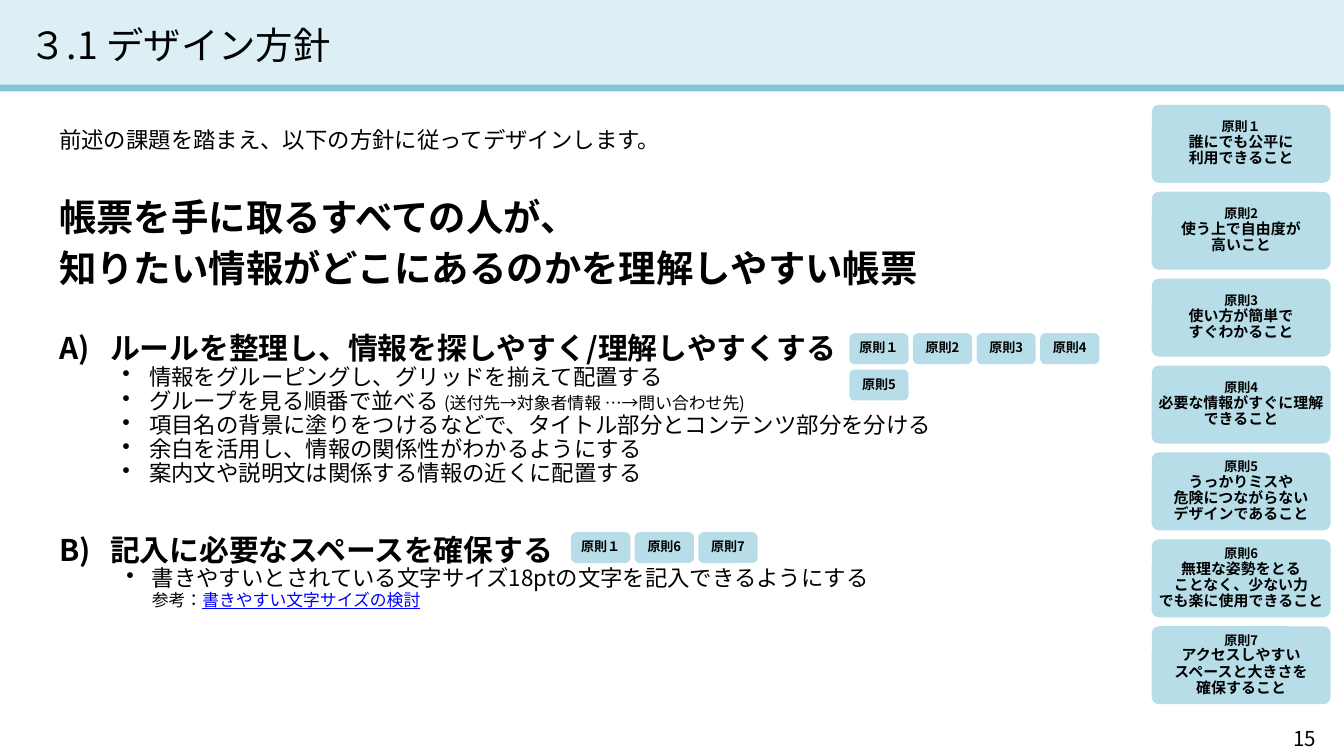
from dataclasses import dataclass

from lxml import etree
from pptx import Presentation
from pptx.dml.color import RGBColor
from pptx.enum.lang import MSO_LANGUAGE_ID
from pptx.enum.shapes import MSO_SHAPE
from pptx.enum.text import MSO_ANCHOR, PP_ALIGN
from pptx.oxml.ns import qn
from pptx.util import Inches, Pt

RECT = MSO_SHAPE.RECTANGLE
ROUNDED = MSO_SHAPE.ROUNDED_RECTANGLE
TOP, MIDDLE = MSO_ANCHOR.TOP, MSO_ANCHOR.MIDDLE
LEFT, CENTER, RIGHT = PP_ALIGN.LEFT, PP_ALIGN.CENTER, PP_ALIGN.RIGHT
JAPANESE = MSO_LANGUAGE_ID.JAPANESE

FONT = "Noto Sans CJK JP"
COLORS = {
    "band": "DCEFF4",
    "rule": "83C5D7",
    "principle": "B7DEE8",
    "text": "000000",
    "link": "0000FF",
}


@dataclass
class Run:
    text: str
    size: float | None = None
    link: bool = False


@dataclass
class Para:
    runs: list[Run]
    size: float
    bold: bool = False
    align: PP_ALIGN = LEFT
    before: float = 0
    after: float = 0
    level: int = 0
    margin: float = 0
    hanging: float = 0
    bullet: str = ""
    number: int = 0


@dataclass
class Principle:
    label: str
    lines: list[str]


@dataclass
class ChipRow:
    left: float
    top: float
    numbers: list[int]


PRINCIPLES = [
    Principle("原則１", ["誰にでも公平に", "利用できること"]),
    Principle("原則2", ["使う上で自由度が\n高いこと"]),
    Principle("原則3", ["使い方が簡単で", "すぐわかること"]),
    Principle("原則4", ["必要な情報がすぐに理解できること"]),
    Principle("原則5", ["うっかりミスや", "危険につながらない\nデザインであること"]),
    Principle("原則6", ["無理な姿勢をとる\nことなく、少ない力\nでも楽に使用できること"]),
    Principle("原則7", ["アクセスしやすい\nスペースと大きさを\n確保すること"]),
]

CHIP_ROWS = [
    ChipRow(6.32, 2.48, [1, 2, 3, 4]),
    ChipRow(6.32, 2.75, [5]),
    ChipRow(4.25, 3.96, [1, 6, 7]),
]


def headline(text: str) -> Para:
    return Para([Run(text)], 20, bold=True, after=6)


def section(text: str, number: int, before: float) -> Para:
    return Para([Run(text)], 16, bold=True, before=before,
                margin=0.38, hanging=0.38, number=number)


def item(*runs: Run, margin: float = 0.67, hanging: float = 0.2) -> Para:
    return Para(list(runs), 12, level=1, margin=margin, hanging=hanging, bullet="•")


BODY = [
    headline("帳票を手に取るすべての人が、"),
    headline("知りたい情報がどこにあるのかを理解しやすい帳票"),
    section("ルールを整理し、情報を探しやすく/理解しやすくする", 1, 17),
    item(Run("情報をグルーピングし、グリッドを揃えて配置する")),
    item(Run("グループを見る順番で並べる "), Run("(送付先→対象者情報 …→問い合わせ先)", 9)),
    item(Run("項目名の背景に塗りをつけるなどで、タイトル部分とコンテンツ部分を分ける")),
    item(Run("余白を活用し、情報の関係性がわかるようにする")),
    item(Run("案内文や説明文は関係する情報の近くに配置する")),
    section("記入に必要なスペースを確保する", 2, 26),
    item(Run("書きやすいとされている文字サイズ18ptの文字を記入できるようにする\n"),
         Run("参考：", 9), Run("書きやすい文字サイズの検討", 9, link=True),
         margin=0.69, hanging=0.19),
]


def rgb(name: str) -> RGBColor:
    return RGBColor.from_string(COLORS[name])


def add_run(p, run: Run) -> None:
    for i, line in enumerate(run.text.split("\n")):
        if i:
            p.add_line_break()
        if not line:
            continue
        r = p.add_run()
        r.text = line
        r.font.language_id = JAPANESE
        if run.size:
            r.font.size = Pt(run.size)
        if run.link:
            r.font.color.rgb = rgb("link")
            r.font.underline = True


def format_paragraph(p, para: Para) -> None:
    p.alignment = para.align
    p.level = para.level
    p.line_spacing = 0.9
    p.space_before, p.space_after = Pt(para.before), Pt(para.after)
    p.font.name = FONT
    p.font.size = Pt(para.size)
    p.font.bold = para.bold
    p.font.color.rgb = rgb("text")
    for run in para.runs:
        add_run(p, run)

    pPr = p._p.get_or_add_pPr()
    pPr.set("marL", str(Inches(para.margin)))
    pPr.set("indent", str(-Inches(para.hanging)))
    defaults = pPr.find(qn("a:defRPr"))
    etree.SubElement(defaults, qn("a:ea"), typeface=FONT)
    if para.bullet:
        defaults.addprevious(etree.Element(qn("a:buChar"), char=para.bullet))
    elif para.number:
        defaults.addprevious(etree.Element(
            qn("a:buAutoNum"), type="alphaUcParenR", startAt=str(para.number)))


def fill_text(sp, paras: list[Para], inset_x: float = 0, inset_y: float = 0,
              anchor: MSO_ANCHOR = TOP) -> None:
    tf = sp.text_frame
    tf.word_wrap = True
    tf.vertical_anchor = anchor
    tf.margin_left = tf.margin_right = Inches(inset_x)
    tf.margin_top = tf.margin_bottom = Inches(inset_y)
    for i, para in enumerate(paras):
        p = tf.add_paragraph() if i else tf.paragraphs[0]
        format_paragraph(p, para)


def add_block(s, kind: MSO_SHAPE, left: float, top: float, width: float,
              height: float, color: str):
    sp = s.shapes.add_shape(kind, Inches(left), Inches(top), Inches(width), Inches(height))
    sp.shadow.inherit = False
    sp.fill.solid()
    sp.fill.fore_color.rgb = rgb(color)
    sp.line.fill.background()
    return sp


def add_text(s, left: float, top: float, width: float, height: float,
             paras: list[Para], inset_x: float = 0, anchor: MSO_ANCHOR = TOP) -> None:
    sp = s.shapes.add_textbox(Inches(left), Inches(top), Inches(width), Inches(height))
    fill_text(sp, paras, inset_x, anchor=anchor)


def add_principle(s, index: int, principle: Principle) -> None:
    sp = add_block(s, ROUNDED, 8.57, 0.78 + index * 3.88 / 6, 1.33, 0.58, "principle")
    sp.adjustments[0] = 0.09
    paras = [Para([Run(principle.label)], 7, bold=True, align=CENTER)]
    paras += [Para([Run(line)], 8, bold=True, align=CENTER) for line in principle.lines]
    fill_text(sp, paras, anchor=MIDDLE)


def add_chips(s, row: ChipRow) -> None:
    for i, number in enumerate(row.numbers):
        sp = add_block(s, ROUNDED, row.left + i * 1.42 / 3, row.top, 0.44, 0.23, "principle")
        label = PRINCIPLES[number - 1].label
        fill_text(sp, [Para([Run(label)], 7, bold=True, align=CENTER)], 0.04, 0.05, MIDDLE)


def main() -> None:
    prs = Presentation()
    prs.slide_width, prs.slide_height = Inches(10), Inches(10 * 9 / 16)
    s = prs.slides.add_slide(prs.slide_layouts[6])
    add_block(s, RECT, 0, 0, 10, 0.65, "band")
    add_text(s, 9.36, 5.38, 0.53, 0.25, [Para([Run("15")], 11, align=RIGHT)], 0.1, MIDDLE)
    add_block(s, RECT, 0, 0.63, 10, 0.05, "rule")
    add_text(s, 0.12, 0.15, 8.19, 0.41, [Para([Run("３.1 デザイン方針")], 20)], 0.1, MIDDLE)
    add_text(s, 0.44, 1.48, 8, 3.26, BODY)
    for index, principle in enumerate(PRINCIPLES):
        add_principle(s, index, principle)
    for row in CHIP_ROWS:
        add_chips(s, row)
    add_text(s, 0.44, 0.96, 8.82, 0.18,
             [Para([Run("前述の課題を踏まえ、以下の方針に従ってデザインします。")], 12, after=6)])
    prs.save("out.pptx")


if __name__ == "__main__":
    main()
